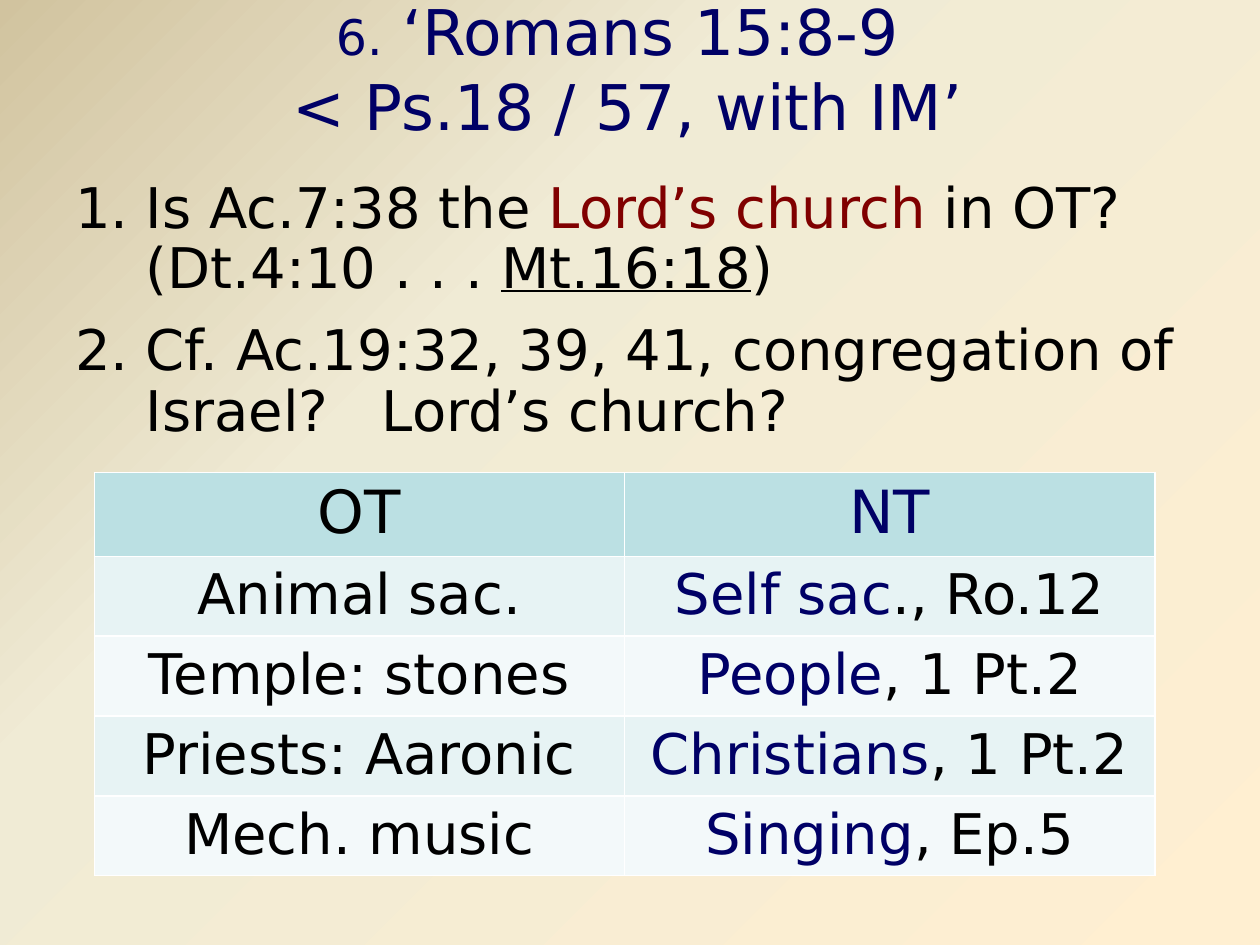
from copy import deepcopy
from dataclasses import dataclass

from pptx import Presentation
from pptx.dml.color import RGBColor
from pptx.enum.text import MSO_ANCHOR, MSO_AUTO_SIZE, PP_ALIGN
from pptx.oxml.ns import qn
from pptx.util import Cm, Pt


@dataclass(frozen=True)
class Theme:
    font: str = "DejaVu Sans"
    black: str = "000000"
    navy: str = "000066"
    maroon: str = "800000"
    header_fill: str = "BBE0E3"
    band_fills: tuple = ("E7F3F4", "F3F9FA")
    backdrop: tuple = ((0, "D1C39F"), (0.35, "F0EBD5"), (1, "FFEFD1"))
    number_size: int = 28
    title_size: int = 36
    header_size: int = 34
    body_size: int = 32


class SlideBuilder:
    def __init__(self, page, theme):
        self.page = page
        self.theme = theme

    def style(self, font, size, color):
        font.name = self.theme.font
        font.size = Pt(size)
        font.bold = False
        font.color.rgb = RGBColor.from_string(color)

    def spans(self, para, parts, size):
        """Fill a paragraph with (text, colour, underlined) parts."""
        self.style(para.font, size, parts[0][1])
        for text, color, *underlined in parts:
            span = para.add_run()
            span.text = text
            span.font.color.rgb = RGBColor.from_string(color)
            if underlined:
                span.font.underline = True

    def background(self):
        fill = self.page.background.fill
        fill.gradient()
        fill.gradient_angle = 315
        first = fill.gradient_stops[0]._gs
        first.addnext(deepcopy(first))
        for stop, (position, color) in zip(fill.gradient_stops, self.theme.backdrop):
            stop.position = position
            stop.color.rgb = RGBColor.from_string(color)

    def title(self, number, lines, left, top, width, height):
        box = self.page.shapes.title
        box.left, box.top, box.width, box.height = left, top, width, height
        frame = box.text_frame
        frame.word_wrap = True
        frame.auto_size = MSO_AUTO_SIZE.NONE
        frame.vertical_anchor = MSO_ANCHOR.MIDDLE
        para = frame.paragraphs[0]
        para.alignment = PP_ALIGN.CENTER
        self.style(para.font, self.theme.title_size, self.theme.navy)
        span = para.add_run()
        span.text = number
        span.font.size = Pt(self.theme.number_size)
        for index, line in enumerate(lines):
            if index:
                para.add_line_break()
            para.add_run().text = line

    def numbered_list(self, items, left, top, width, height):
        frame = self.page.shapes.add_textbox(left, top, width, height).text_frame
        frame.word_wrap = True
        for index, parts in enumerate(items):
            para = frame.add_paragraph() if index else frame.paragraphs[0]
            properties = para._p.get_or_add_pPr()
            properties.set("marL", str(Cm(1.42)))
            properties.set("indent", str(-Cm(1.42)))
            bullet = properties.makeelement(qn("a:buAutoNum"), {"type": "arabicPeriod"})
            properties.append(bullet)
            para.line_spacing = 0.9
            para.space_before = Pt(6.4 if index else 0)
            para.space_after = Pt(6)
            self.spans(para, parts, self.theme.body_size)

    def table(self, rows, left, top, width, header_height, row_height):
        theme = self.theme
        height = header_height + row_height * (len(rows) - 1)
        table = self.page.shapes.add_table(
            len(rows), len(rows[0]), left, top, width, height).table
        for r, row in enumerate(rows):
            table.rows[r].height = row_height if r else header_height
            fill = theme.band_fills[(r - 1) % 2] if r else theme.header_fill
            size = theme.body_size if r else theme.header_size
            for c, parts in enumerate(row):
                cell = table.cell(r, c)
                cell.fill.solid()
                cell.fill.fore_color.rgb = RGBColor.from_string(fill)
                para = cell.text_frame.paragraphs[0]
                para.alignment = PP_ALIGN.CENTER
                self.spans(para, parts, size)


def main():
    theme = Theme()
    black, navy = theme.black, theme.navy
    deck = Presentation()
    deck.slide_width, deck.slide_height = Cm(25.4), Cm(19.05)
    page = deck.slides.add_slide(deck.slide_layouts.get_by_name("Title Only"))
    builder = SlideBuilder(page, theme)
    builder.background()

    # Heading
    builder.title("6.", [" ‘Romans 15:8-9 ", "< Ps.18 / 57, with IM’"],
                  Cm(1.22), Cm(0.2), Cm(22.86), Cm(2.34))

    # Questions
    questions = [
        [("Is Ac.7:38 the ", black), ("Lord’s church ", theme.maroon),
         ("in OT? (Dt.4:10 . . . ", black), ("Mt.16:18", black, True), (")", black)],
        [("Cf. Ac.19:32, 39, 41, congregation of Israel?   Lord’s church?", black)],
    ]
    builder.numbered_list(questions, Cm(1.27), Cm(3.5), Cm(22.86), Cm(5.7))

    # Old and New Testament compared
    contrasts = [
        ("Animal sac.", "Self sac", "., Ro.12"),
        ("Temple: stones", "People", ", 1 Pt.2"),
        ("Priests: Aaronic", "Christians", ", 1 Pt.2"),
        ("Mech. music", "Singing", ", Ep.5"),
    ]
    rows = [[[("OT", black)], [("NT", navy)]]]
    rows += [[[(old, black)], [(new, navy), (verse, black)]]
             for old, new, verse in contrasts]
    builder.table(rows, Cm(1.9), Cm(9.52), Cm(21.38), Cm(1.65), Cm(1.57))

    deck.save("out.pptx")


if __name__ == "__main__":
    main()
